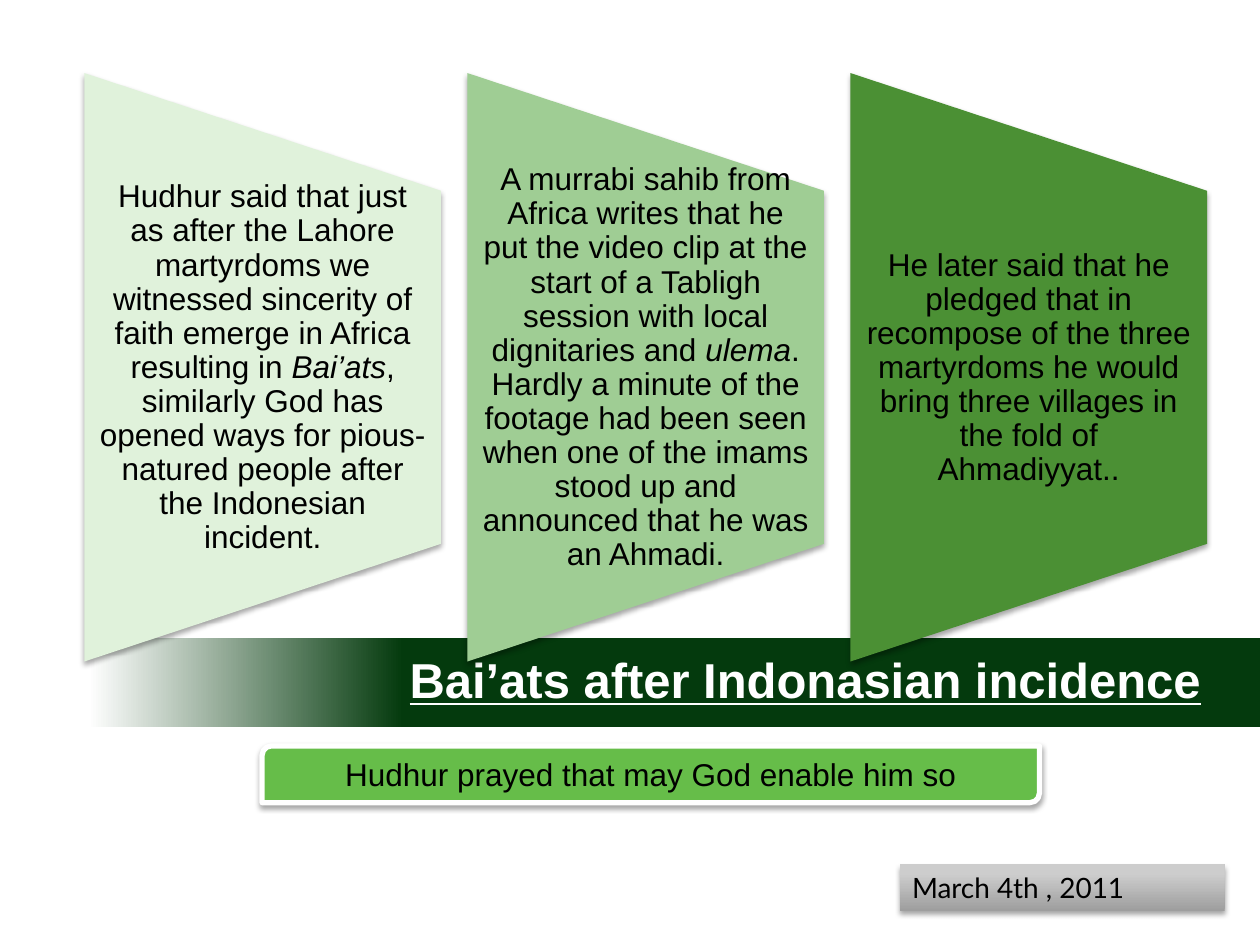
import pptx
import pptx.util
import pptx.dml.color
import pptx.enum.shapes
import pptx.enum.text
import pptx.oxml
import pptx.oxml.ns

Inches = pptx.util.Inches
Pt = pptx.util.Pt
RGBColor = pptx.dml.color.RGBColor
MSO_SHAPE = pptx.enum.shapes.MSO_SHAPE
PP_ALIGN = pptx.enum.text.PP_ALIGN
MSO_ANCHOR = pptx.enum.text.MSO_ANCHOR

BLACK = RGBColor(0x00, 0x00, 0x00)
WHITE = RGBColor(0xFF, 0xFF, 0xFF)
DARK_GREEN = RGBColor(0x04, 0x3A, 0x0D)
BRIGHT_GREEN = RGBColor(0x66, 0xBD, 0x49)
DARK_GREY = RGBColor(0x9E, 0x9E, 0x9E)
LIGHT_GREY = RGBColor(0xCD, 0xCD, 0xCD)

PANELS = [
    (RGBColor(0xE0, 0xF2, 0xDB), [
        ("Hudhur said that just as after the Lahore martyrdoms we witnessed sincerity "
         "of faith emerge in Africa resulting in ", False),
        ("Bai’ats", True),
        (", similarly God has opened ways for pious-natured people after the "
         "Indonesian incident.", False)]),
    (RGBColor(0x9F, 0xCD, 0x94), [
        ("A murrabi sahib from Africa writes that he put the video clip at the start "
         "of a Tabligh session with local dignitaries and ", False),
        ("ulema", True),
        (". Hardly a minute of the footage had been seen when one of the imams stood "
         "up and announced that he was an Ahmadi.", False)]),
    (RGBColor(0x4B, 0x90, 0x34), [
        ("He later said that he pledged that in recompose of the three martyrdoms he "
         "would bring three villages in the fold of Ahmadiyyat..", False)]),
]


class SlideBuilder:
    font = "Arial"
    size = 18

    def __init__(self, slide):
        self.s = slide

    def shape(self, kind, box, fill=None, shadow=True):
        sp = self.s.shapes.add_shape(kind, *map(Inches, box))
        sp.line.fill.background()
        if fill is not None:
            sp.fill.solid()
            sp.fill.fore_color.rgb = fill
        sp.shadow.inherit = False
        if shadow:
            effects = sp._element.spPr.find(pptx.oxml.ns.qn("a:effectLst"))
            effects.append(pptx.oxml.parse_xml(
                f'<a:outerShdw {pptx.oxml.ns.nsdecls("a")} blurRad="{Pt(3.1)}" '
                f'dist="{Pt(1.8)}" dir="5400000" rotWithShape="0">'
                '<a:srgbClr val="000000"><a:alpha val="35000"/></a:srgbClr>'
                '</a:outerShdw>'))
        return sp

    def gradient(self, sp, angle, stops):
        sp.fill.gradient()
        sp.fill.gradient_angle = angle
        for stop, (position, color) in zip(sp.fill.gradient_stops, stops):
            stop.position = position
            stop.color.rgb = color

    def text(self, sp, runs, align=PP_ALIGN.CENTER, color=BLACK, size=size, font=font,
             inset=0.1):
        tf = sp.text_frame
        tf.word_wrap = True
        tf.auto_size = pptx.enum.text.MSO_AUTO_SIZE.NONE
        tf.vertical_anchor = MSO_ANCHOR.MIDDLE
        tf.margin_left = tf.margin_right = Inches(inset)
        tf.margin_top = tf.margin_bottom = 0
        p = tf.paragraphs[0]
        p.alignment = align
        p.font.name = font
        p.font.size = Pt(size)
        p.font.color.rgb = color
        for words, italic in runs:
            r = p.add_run()
            r.text = words
            if italic:
                r.font.italic = True
        return p

    def title(self, words):
        sp = self.s.shapes.title
        sp.left, sp.top, sp.width, sp.height = map(Inches, (2.61, 5.08, 6.92, 0.62))
        p = self.text(sp, [(words, False)], PP_ALIGN.RIGHT, WHITE, 28, inset=0)
        p.space_before = Pt(0)
        p.font.bold = True
        p.font.underline = True

    def title_bar(self):
        sp = self.shape(MSO_SHAPE.RECTANGLE, (0, 5.06, 10, 0.71), shadow=False)
        self.gradient(sp, 0, [(0.07, WHITE), (0.32, DARK_GREEN)])
        self.s.shapes.title._element.addprevious(sp._element)

    def panel(self, left, color, runs):
        width, height, top = 2.83, 4.67, 0.58
        sp = self.shape(MSO_SHAPE.FLOWCHART_MANUAL_OPERATION,
                        (left - (height - width) / 2, top + (height - width) / 2,
                         height, width), color)
        sp.rotation = 270
        tb = self.s.shapes.add_textbox(*map(Inches, (left, 1.52, width, 2.8)))
        self.text(tb, runs, inset=0.12).line_spacing = 0.9

    def prayer(self, words):
        sp = self.shape(MSO_SHAPE.ROUND_2_DIAG_RECTANGLE, (2.08, 5.92, 6.17, 0.45),
                        BRIGHT_GREEN)
        sp.line.color.rgb = WHITE
        sp.line.width = Pt(3)
        self.text(sp, [(words, False)])

    def date(self, words):
        sp = self.shape(MSO_SHAPE.RECTANGLE, (7.14, 6.86, 2.58, 0.37))
        self.gradient(sp, 90, [(0, DARK_GREY), (0.8, LIGHT_GREY)])
        self.text(sp, [(words, False)], PP_ALIGN.LEFT, size=16, font="Lato")


def main():
    prs = pptx.Presentation()
    prs.slide_width, prs.slide_height = Inches(10), Inches(7.5)
    b = SlideBuilder(prs.slides.add_slide(prs.slide_layouts[5]))
    b.title_bar()
    b.title("Bai’ats after Indonasian incidence")
    for i, (color, runs) in enumerate(PANELS):
        b.panel(0.67 + 3.04 * i, color, runs)
    b.prayer("Hudhur prayed that may God enable him so")
    b.date("March 4th , 2011")
    prs.save("out.pptx")


if __name__ == "__main__":
    main()
